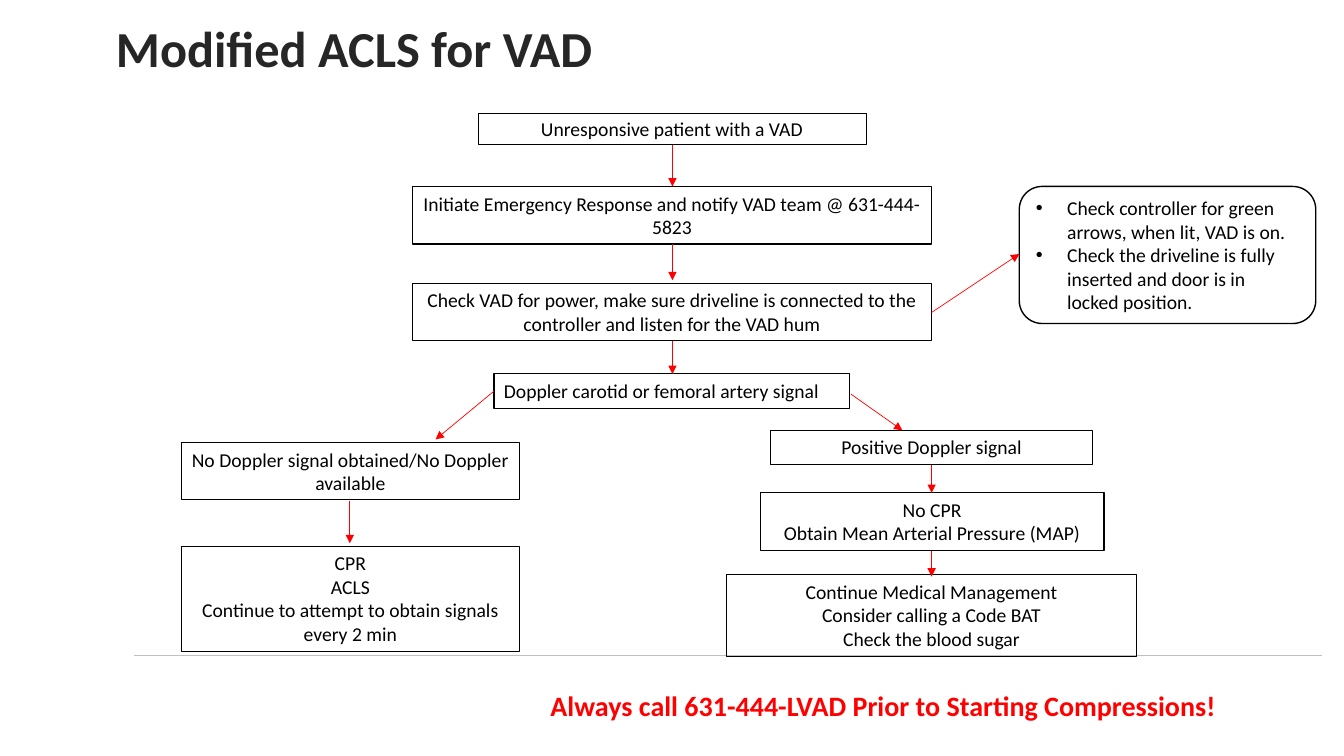
"""Build the Modified ACLS for VAD flowchart slide."""
from lxml.etree import SubElement
from pptx import Presentation
from pptx.dml.color import RGBColor
from pptx.enum.shapes import MSO_CONNECTOR, MSO_SHAPE
from pptx.enum.text import MSO_ANCHOR, PP_ALIGN
from pptx.oxml.ns import qn
from pptx.util import Pt

PX = 9144
COLORS = {"ink": "000000", "title": "262626", "alert": "FF0000",
          "rule": "C0C0C0", "paper": "FFFFFF"}


def write(shape, lines, size=14, color="ink", bold=False,
          align=PP_ALIGN.CENTER, anchor=MSO_ANCHOR.TOP, bullet=False):
    frame = shape.text_frame
    frame.word_wrap = True
    frame.vertical_anchor = anchor
    frame.text = "\n".join(lines)
    for para in frame.paragraphs:
        para.alignment = align
        if bullet:
            properties = para._p.get_or_add_pPr()
            properties.set("marL", str(31 * PX))
            properties.set("indent", str(-31 * PX))
            SubElement(properties, qn("a:buFont"), typeface="Arial")
            SubElement(properties, qn("a:buChar"), char="•")
        para.font.name = "Calibri"
        para.font.size = Pt(size)
        para.font.bold = bold
        para.font.color.rgb = RGBColor.from_string(COLORS[color])


def connect(start_x, start_y, end_x, end_y, color, width, arrow=True):
    line = page.shapes.add_connector(
        MSO_CONNECTOR.STRAIGHT, start_x * PX, start_y * PX, end_x * PX, end_y * PX)
    line.line.color.rgb = RGBColor.from_string(COLORS[color])
    line.line.width = Pt(width)
    if arrow:
        SubElement(line.line._get_or_add_ln(), qn("a:tailEnd"), type="triangle")
    SubElement(line._element.spPr, qn("a:effectLst"))


deck = Presentation()
deck.slide_width = 1333 * PX
deck.slide_height = 750 * PX
page = deck.slides.add_slide(deck.slide_layouts[6])

connect(133, 650, 1311, 650, "rule", 1, arrow=False)

title = page.shapes.add_textbox(115 * PX, 18 * PX, 575 * PX, 79 * PX)
write(title, ["Modified ACLS for VAD"], 36, "title", True, PP_ALIGN.LEFT)
title_frame = title.text_frame
title_frame.margin_left = title_frame.margin_right = 0
title_frame.margin_top = title_frame.margin_bottom = 0
title_frame.paragraphs[0].line_spacing = Pt(42.7)

reminder = page.shapes.add_textbox(430 * PX, 674 * PX, 892 * PX, 51 * PX)
write(reminder, ["Always call 631-444-LVAD Prior to Starting Compressions!"],
      20, "alert", True, anchor=MSO_ANCHOR.MIDDLE)

RECT, ROUNDED = MSO_SHAPE.RECTANGLE, MSO_SHAPE.ROUNDED_RECTANGLE
CENTER, LEFT = PP_ALIGN.CENTER, PP_ALIGN.LEFT
TOP, MIDDLE = MSO_ANCHOR.TOP, MSO_ANCHOR.MIDDLE
steps = [
    (RECT, 474, 112, 385, 31, 0.5, None, CENTER, MIDDLE,
     ["Unresponsive patient with a VAD"]),
    (RECT, 409, 185, 515, 57, 1, "paper", CENTER, TOP,
     ["Initiate Emergency Response and notify VAD team @ 631-444-5823"]),
    (RECT, 409, 281, 515, 57, 0.75, None, CENTER, TOP,
     ["Check VAD for power, make sure driveline is connected to the "
      "controller and listen for the VAD hum"]),
    (RECT, 490, 371, 353, 34, 0.75, None, LEFT, TOP,
     ["Doppler carotid or femoral artery signal"]),
    (RECT, 180, 439, 335, 57, 0.75, None, CENTER, TOP,
     ["No Doppler signal obtained/No Doppler available"]),
    (RECT, 180, 542, 335, 104, 0.75, None, CENTER, TOP,
     ["CPR", "ACLS", "Continue to attempt to obtain signals every 2 min"]),
    (RECT, 764, 427, 320, 34, 0.75, None, CENTER, TOP,
     ["Positive Doppler signal"]),
    (RECT, 754, 489, 341, 57, 0.75, None, CENTER, TOP,
     ["No CPR", "Obtain Mean Arterial Pressure (MAP)"]),
    (RECT, 721, 570, 406, 81, 0.75, None, CENTER, TOP,
     ["Continue Medical Management", "Consider calling a Code BAT",
      "Check the blood sugar"]),
    (ROUNDED, 1011, 185, 294, 136, 1, "paper", LEFT, MIDDLE,
     ["Check controller for green arrows, when lit, VAD is on.",
      "Check the driveline is fully inserted and door is in locked position."]),
]
for kind, left, top, width, height, border, fill, align, anchor, lines in steps:
    box = page.shapes.add_shape(kind, left * PX, top * PX, width * PX, height * PX)
    box.shadow.inherit = False
    if fill:
        box.fill.solid()
        box.fill.fore_color.rgb = RGBColor.from_string(COLORS[fill])
    else:
        box.fill.background()
    box.line.color.rgb = RGBColor.from_string(COLORS["ink"])
    box.line.width = Pt(border)
    write(box, lines, align=align, anchor=anchor, bullet=kind == ROUNDED)

arrows = [
    (667, 144, 667, 185), (667, 242, 667, 278), (667, 338, 667, 371),
    (490, 388, 432, 436), (347, 497, 347, 539),
    (844, 391, 895, 427), (924, 461, 924, 489), (924, 547, 924, 572),
    (924, 310, 1011, 252),
]
for ends in arrows:
    connect(*ends, "alert", 0.5)

deck.save("out.pptx")
